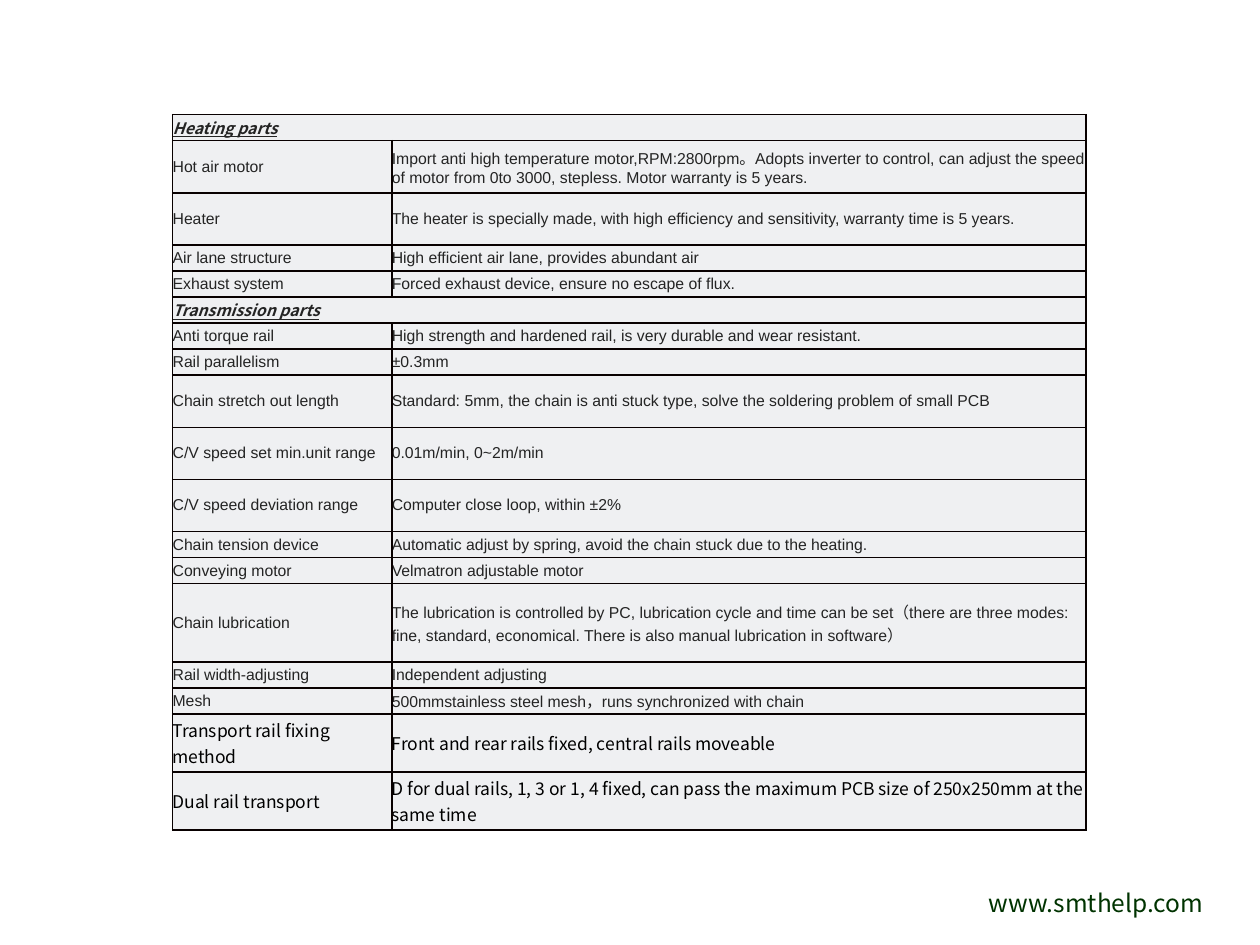
from dataclasses import dataclass

from lxml import etree
from pptx import Presentation
from pptx.dml.color import RGBColor
from pptx.enum import text
from pptx.oxml import ns
from pptx.util import Inches, Pt

CJK = "Noto Sans CJK SC"
HEADING = dict(name=CJK, size=Pt(9), bold=True, italic=True, underline=True)
BODY = dict(name="Arial", size=Pt(9), bold=False)
LARGE = dict(name=CJK, size=Pt(10), bold=False)
INK, BLACK, BORDER, PANEL, GREEN = "242424", "000000", "080000", "EFF0F2", "003300"
LINE = Inches(4.76) // 23  # the 16 rows before the large ones share 23 lines
LARGE_ROW = Inches(0.46)


@dataclass
class Row:
    label: str
    value: str = ""  # a row without a value is a section heading
    lines: int = 1
    large: bool = False


ROWS = [
    Row("Heating parts"),
    Row("Hot air motor", "Import anti high temperature motor,RPM:2800rpm。Adopts inverter to "
        "control, can adjust the speed of motor from 0to 3000, stepless. "
        "Motor warranty is 5 years.", 2),
    Row("Heater", "The heater is specially made, with high efficiency and sensitivity, "
        "warranty time is 5 years.", 2),
    Row("Air lane structure", "High efficient air lane, provides abundant air"),
    Row("Exhaust system", "Forced exhaust device, ensure no escape of flux."),
    Row("Transmission parts"),
    Row("Anti torque rail", "High strength and hardened rail, is very durable and wear resistant."),
    Row("Rail parallelism", "±0.3mm"),
    Row("Chain stretch out length", "Standard: 5mm, the chain is anti stuck type, solve the "
        "soldering problem of small PCB", 2),
    Row("C/V speed set min.unit range", "0.01m/min, 0~2m/min", 2),
    Row("C/V speed deviation range", "Computer close loop, within ±2%", 2),
    Row("Chain tension device",
        "Automatic adjust by spring, avoid the chain stuck due to the heating."),
    Row("Conveying motor", "Velmatron adjustable motor"),
    Row("Chain lubrication", "The lubrication is controlled by PC, lubrication cycle and time can "
        "be set（there are three modes: fine, standard, economical. There is also manual "
        "lubrication in software）", 3),
    Row("Rail width-adjusting", "Independent adjusting"),
    Row("Mesh", "500mmstainless steel mesh，runs synchronized with chain"),
    Row("Transport rail fixing method", "Front and rear rails fixed, central rails moveable",
        large=True),
    Row("Dual rail transport", "D for dual rails, 1, 3 or 1, 4 fixed, can pass the maximum PCB "
        "size of 250x250mm at the same time", large=True),
]


def rgb(value: str) -> RGBColor:
    return RGBColor.from_string(value)


def write(tf, words: str, style: dict, color: str) -> None:
    r = tf.paragraphs[0].add_run()
    r.text = words
    for name, value in style.items():
        setattr(r.font, name, value)
    r.font.color.rgb = rgb(color)


def add_borders(cell) -> None:
    tc_pr = cell._tc.get_or_add_tcPr()
    for i, side in enumerate(("lnL", "lnR", "lnT", "lnB")):
        ln = etree.Element(ns.qn(f"a:{side}"), w=str(Pt(1)))
        fill = etree.SubElement(ln, ns.qn("a:solidFill"))
        etree.SubElement(fill, ns.qn("a:srgbClr"), val=BORDER)
        tc_pr.insert(i, ln)  # borders come before the fill


def format_cell(cell) -> None:
    for side in ("left", "right", "top", "bottom"):
        setattr(cell, f"margin_{side}", 0)
    cell.vertical_anchor = text.MSO_ANCHOR.MIDDLE
    cell.fill.solid()
    cell.fill.fore_color.rgb = rgb(PANEL)
    add_borders(cell)


def add_parts_table(slide, rows: list[Row]) -> None:
    heights = [LARGE_ROW if row.large else row.lines * LINE for row in rows]
    table = slide.shapes.add_table(len(rows), 2, Inches(1.37), Inches(0.91),
                                   Inches(7.25), sum(heights)).table
    table.first_row = table.horz_banding = False
    for column, width in zip(table.columns, (1.74, 5.51)):
        column.width = Inches(width)
    for i, (row, height) in enumerate(zip(rows, heights)):
        table.rows[i].height = height
        label, value = table.cell(i, 0), table.cell(i, 1)
        for cell in (label, value):
            format_cell(cell)
        if not row.value:
            label.merge(value)
            write(label.text_frame, row.label, HEADING, INK)
            continue
        style, color = (LARGE, BLACK) if row.large else (BODY, INK)
        write(label.text_frame, row.label, style, color)
        write(value.text_frame, row.value, style, color)


def add_web_address(slide) -> None:
    tf = slide.shapes.add_textbox(Inches(7.75), Inches(7), Inches(2.26), Inches(0.33)).text_frame
    tf.word_wrap = True
    write(tf, "www.smthelp.com", dict(name=CJK, size=Pt(14)), GREEN)


def main() -> None:
    prs = Presentation()
    prs.slide_width, prs.slide_height = Inches(10), Inches(7.5)
    s = prs.slides.add_slide(prs.slide_layouts[6])
    add_web_address(s)
    add_parts_table(s, ROWS)
    prs.save("out.pptx")


if __name__ == "__main__":
    main()
